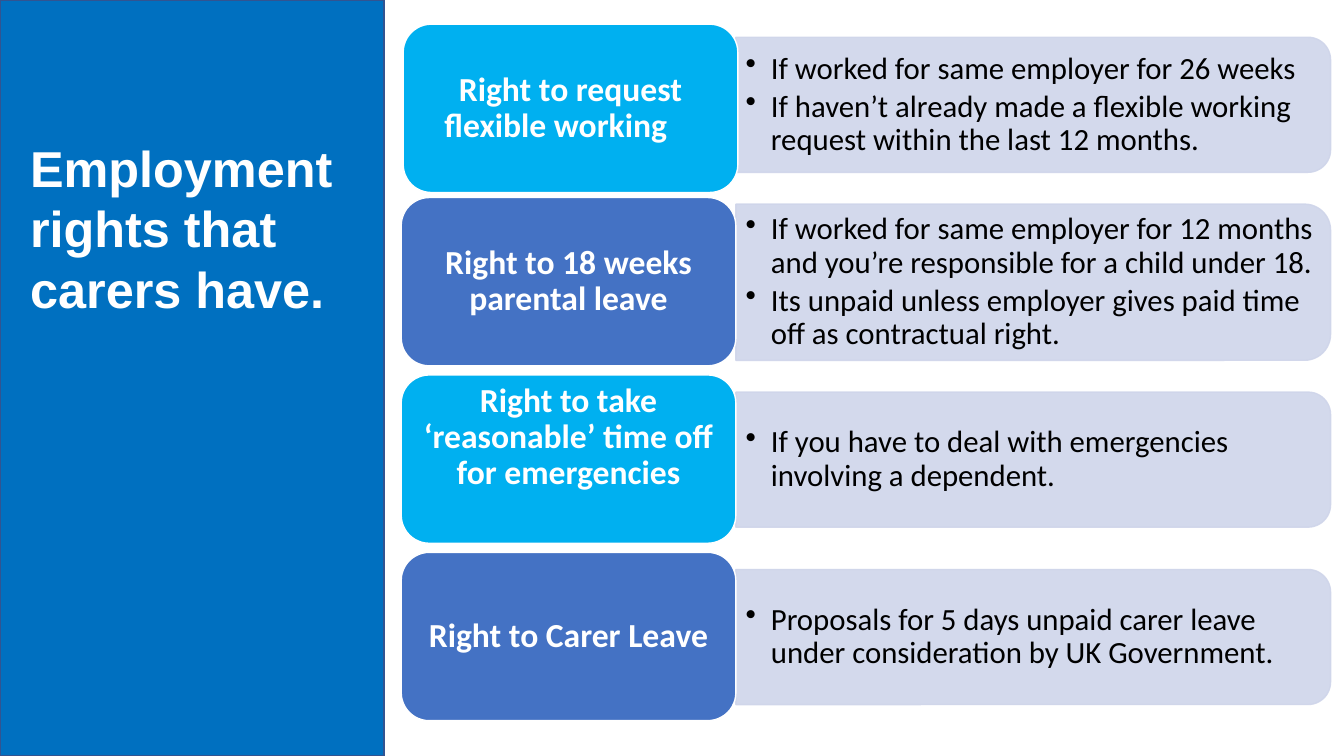
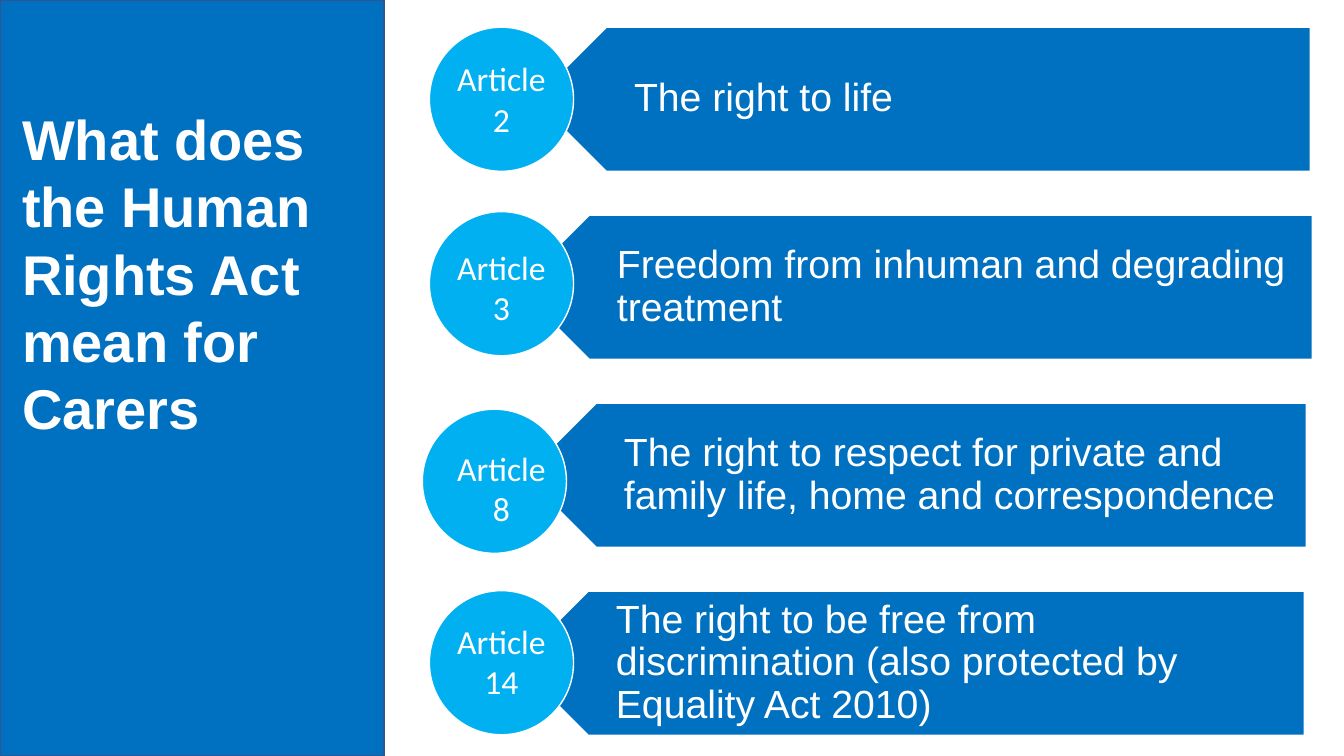
from lxml.etree import SubElement
from pptx import Presentation
from pptx.dml.color import RGBColor
from pptx.enum.shapes import MSO_SHAPE
from pptx.enum.text import MSO_ANCHOR, PP_ALIGN
from pptx.oxml.ns import qn
from pptx.util import Inches, Pt

SLIDE_WIDTH, SLIDE_HEIGHT = Inches(13.33), Inches(7.5)
COLUMN, ROW = SLIDE_WIDTH / 40, SLIDE_HEIGHT / 30
COLOURS = {
    "band": "0070C0",
    "band_edge": "325491",
    "sky": "00B0F0",
    "indigo": "4472C4",
    "panel": "CFD5EA",
    "white": "FFFFFF",
    "black": "000000",
}

RIGHTS_TITLE = "Employment rights that carers have."
RIGHTS_PITCH = 7.04
RIGHTS = [
    (12, 0.96, "sky", 5.36, MSO_ANCHOR.MIDDLE, "Right to request flexible working\t", [
        "If worked for same employer for 26 weeks",
        "If haven’t already made a flexible working request within the last 12 months.",
    ]),
    (11.94, 7.84, "indigo", 6.2, MSO_ANCHOR.MIDDLE, "Right to 18 weeks parental leave", [
        "If worked for same employer for 12 months and you’re responsible for a child under 18.",
        "Its unpaid unless employer gives paid time off as contractual right.",
    ]),
    (11.94, 14.88, "sky", 5.36, MSO_ANCHOR.TOP, "Right to take ‘reasonable’ time off for emergencies", [
        "If you have to deal with emergencies involving a dependent.",
    ]),
    (11.94, 21.92, "indigo", 5.36, MSO_ANCHOR.MIDDLE, "Right to Carer Leave", [
        "Proposals for 5 days unpaid carer leave under consideration by UK Government.",
    ]),
]

ARTICLES_TITLE = "What does the Human Rights Act mean for Carers"
ARTICLES_PITCH = 7.46
ARTICLE_HEIGHT = 5.72
ARTICLES = [
    ("Article 2", "The right to life", 15.9, 39, 12.78, 1.08, 2.12),
    ("Article 3", "Freedom from inhuman and degrading treatment", 15.39, 39.06, 12.78, 8.4, 9.6),
    ("Article 8", "The right to respect for private and family life, home and correspondence",
     15.6, 38.88, 12.57, 16.24, 17.56),
    ("Article 14", "The right to be free from discrimination (also protected by Equality Act 2010)",
     15.36, 38.82, 12.78, 23.44, 24.44),
]


def colour(name):
    return RGBColor.from_string(COLOURS[name])


def grid_box(column, row, columns, rows):
    return [int(column * COLUMN), int(row * ROW), int(columns * COLUMN), int(rows * ROW)]


def add_block(slide, kind, box, fill, line="white", rotation=0):
    left, top, width, height = box
    if rotation == 90:
        left, top = left + (width - height) // 2, top + (height - width) // 2
        width, height = height, width
    shape = slide.shapes.add_shape(kind, left, top, width, height)
    shape.rotation = rotation
    shape.shadow.inherit = False
    shape.fill.solid()
    shape.fill.fore_color.rgb = colour(fill)
    shape.line.color.rgb = colour(line)
    shape.line.width = Pt(1)
    return shape


def set_opacity(shape, percent):
    for element in shape.element.spPr.iter(qn("a:srgbClr")):
        SubElement(element, qn("a:alpha")).set("val", str(percent * 1000))


def write_text(shape, lines, font, size, ink="white", bold=False, align=PP_ALIGN.LEFT,
               anchor=MSO_ANCHOR.TOP, spacing=1.0):
    text_frame = shape.text_frame
    text_frame.text = "\n".join(lines)
    text_frame.word_wrap = True
    text_frame.vertical_anchor = anchor
    for paragraph in text_frame.paragraphs:
        paragraph.alignment = align
        paragraph.line_spacing = spacing
        for run in paragraph.runs:
            run.font.name = font
            run.font.size = Pt(size)
            run.font.bold = bold
            run.font.color.rgb = colour(ink)
    return text_frame


def add_text(slide, box, lines, font, size, **style):
    return write_text(slide.shapes.add_textbox(*box), lines, font, size, **style)


def add_bullets(slide, box, lines):
    text_frame = add_text(slide, box, lines, "Calibri", 22, ink="black",
                          anchor=MSO_ANCHOR.MIDDLE, spacing=0.9)
    for paragraph in text_frame.paragraphs:
        paragraph.space_after = Pt(3.5)
        properties = paragraph._p.get_or_add_pPr()
        properties.set("marL", str(Inches(0.25)))
        properties.set("indent", str(-Inches(0.25)))
        SubElement(properties, qn("a:buChar")).set("char", "•")


def add_titled_slide(presentation, title, title_box, size):
    slide = presentation.slides.add_slide(presentation.slide_layouts[6])
    add_block(slide, MSO_SHAPE.RECTANGLE, grid_box(0, 0, 11.43, 30), "band", "band_edge")
    add_text(slide, grid_box(*title_box), [title], "Arial", size, bold=True)
    return slide


def add_right(slide, index, right):
    tile_column, tile_row, fill, panel_rows, anchor, heading, points = right
    panel_row = 4.16 + index * RIGHTS_PITCH - panel_rows / 2
    panel = add_block(slide, MSO_SHAPE.ROUND_2_SAME_RECTANGLE,
                      grid_box(21.9, panel_row, 17.7, panel_rows), "panel", "panel", 90)
    set_opacity(panel, 90)
    add_bullets(slide, grid_box(21.9, panel_row, 17.52, panel_rows), points)
    tile = add_block(slide, MSO_SHAPE.ROUNDED_RECTANGLE,
                     grid_box(tile_column, tile_row, 9.96, 6.68), fill)
    text_frame = write_text(tile, [heading], "Calibri", 24, bold=True,
                            align=PP_ALIGN.CENTER, anchor=anchor, spacing=0.9)
    if anchor == MSO_ANCHOR.TOP:
        text_frame.margin_top = 0


def add_article(slide, index, article):
    label, meaning, left, right, circle_column, circle_row, label_row = article
    row = 1.08 + index * ARTICLES_PITCH
    add_block(slide, MSO_SHAPE.PENTAGON,
              grid_box(left, row, right - left, ARTICLE_HEIGHT), "band", rotation=180)
    text_left = left + 1.08
    text_frame = add_text(slide, grid_box(text_left, row, right - text_left, ARTICLE_HEIGHT),
                          [meaning], "Arial", 28, anchor=MSO_ANCHOR.MIDDLE, spacing=0.9)
    text_frame.margin_left = Inches(0.63)
    text_frame.margin_right = Inches(0.22)
    text_frame.margin_top = text_frame.margin_bottom = Inches(0.12)
    diameter = int(ARTICLE_HEIGHT * ROW)
    circle_box = grid_box(circle_column, circle_row, 0, 0)[:2] + [diameter, diameter]
    add_block(slide, MSO_SHAPE.OVAL, circle_box, "sky")
    add_text(slide, grid_box(13.29, label_row, 3.27, 3.64), [label], "Calibri", 24,
             align=PP_ALIGN.CENTER)


def main():
    presentation = Presentation()
    presentation.slide_width, presentation.slide_height = SLIDE_WIDTH, SLIDE_HEIGHT

    slide = add_titled_slide(presentation, RIGHTS_TITLE, (0.6, 5.24, 10.56, 7.68), 36)
    for index, right in enumerate(RIGHTS):
        add_right(slide, index, right)

    slide = add_titled_slide(presentation, ARTICLES_TITLE, (0.36, 3.96, 10.92, 13.88), 40)
    for index, article in enumerate(ARTICLES):
        add_article(slide, index, article)

    presentation.save("out.pptx")


if __name__ == "__main__":
    main()
